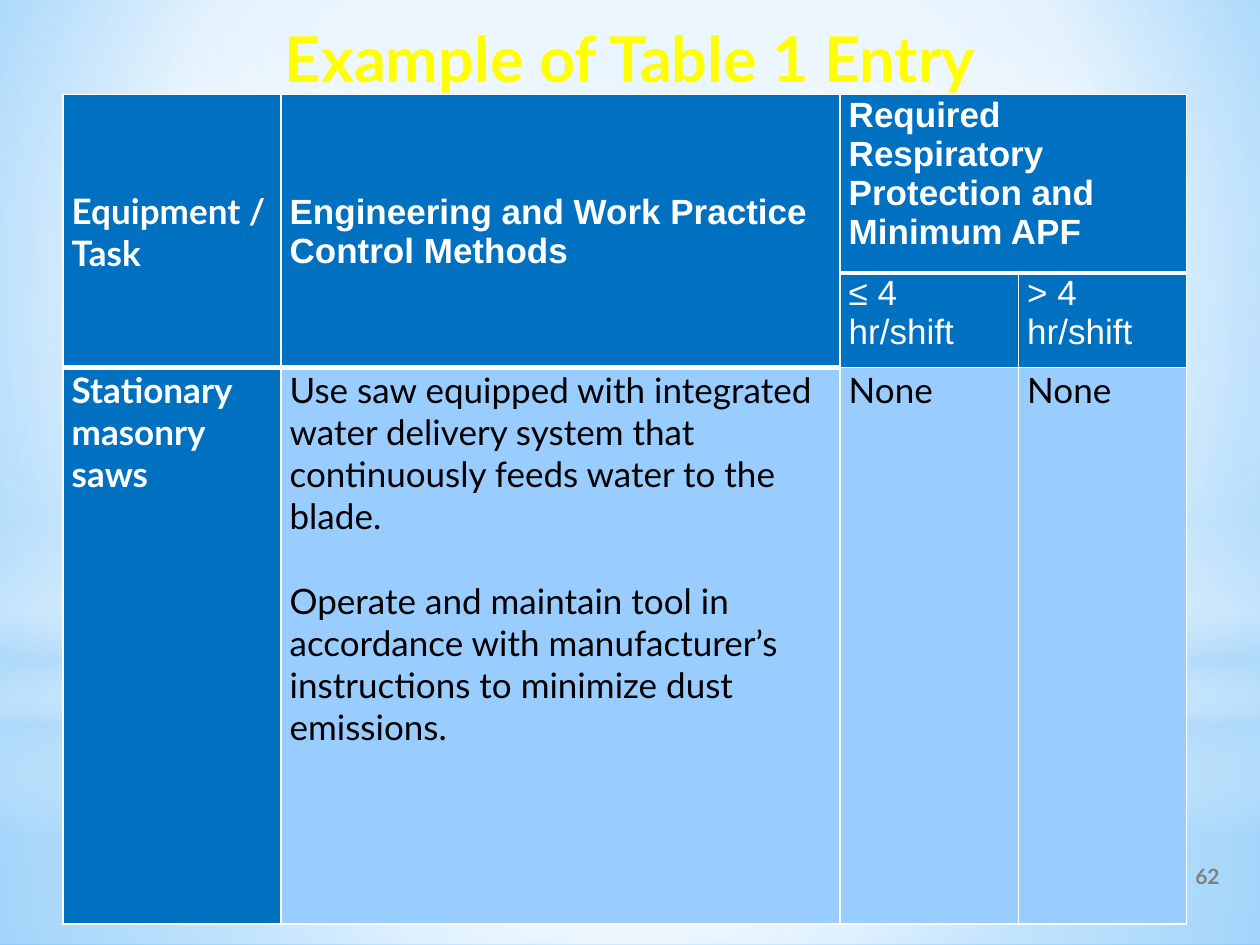
from pptx import Presentation
from pptx.dml.color import RGBColor
from pptx.enum.shapes import MSO_SHAPE
from pptx.enum.text import MSO_ANCHOR, PP_ALIGN
from pptx.oxml import parse_xml
from pptx.oxml.ns import nsdecls, qn
from pptx.util import Pt


class Theme:
    white, black, grey = "FFFFFF", "000000", "808080"
    yellow, edge = "FFFF00", "4E67C8"
    deep, light, mist = "0070C0", "99CCFF", "B4DCFA"
    sky, blue = "9ED5FF", "5BB9FF"
    main, alt = "Lato", "Arial"
    big, mid, small = 36, 20, 12


def style(name, size, color, bold):
    return {"name": name, "size": Pt(size), "bold": bold, "color": color}


def line(tag, width, color):
    return parse_xml(
        f'<a:{tag} {nsdecls("a")} w="{Pt(width)}"><a:solidFill>'
        f'<a:srgbClr val="{color}"/></a:solidFill></a:{tag}>')


def blend(root, stops, to=None):
    """Swap a solid fill for a gradient: circular around to, else downward."""
    marks = "".join(
        f'<a:gs pos="{pos * 1000}"><a:srgbClr val="{color}">'
        f'<a:alpha val="{alpha * 1000}"/></a:srgbClr></a:gs>'
        for pos, color, alpha in stops)
    if to:
        sides = " ".join(f'{s}="{v * 1000}"' for s, v in zip("ltrb", to))
        way = f'<a:path path="circle"><a:fillToRect {sides}/></a:path>'
    else:
        way = '<a:lin ang="5400000" scaled="0"/>'
    old = root.find(".//" + qn("a:solidFill"))
    old.getparent().replace(old, parse_xml(
        f'<a:gradFill {nsdecls("a")} rotWithShape="1">'
        f'<a:gsLst>{marks}</a:gsLst>{way}</a:gradFill>'))


class Deck:
    def __init__(self, theme):
        self.theme = theme
        self.prs = Presentation()
        self.prs.slide_width, self.prs.slide_height = Pt(720), Pt(540)
        self.slide = self.prs.slides.add_slide(self.prs.slide_layouts[5])

    def back(self, stops, to):
        self.slide.background.fill.solid()
        blend(self.slide._element.cSld, stops, to)

    def glow(self, kind, box, stops, to=None):
        shape = self.slide.shapes.add_shape(kind, *map(Pt, box))
        shape.shadow.inherit = False
        shape.line.fill.background()
        shape.fill.solid()
        blend(shape._element.spPr, stops, to)

    def text(self, frame, lines, look, align=PP_ALIGN.LEFT, gap=0):
        for i, words in enumerate(lines):
            para = frame.add_paragraph() if i else frame.paragraphs[0]
            para.alignment = align
            if i and gap:
                para.space_before = Pt(gap)
            run = para.add_run()
            run.text = words
            for key, value in look.items():
                if key == "color":
                    run.font.color.rgb = RGBColor.from_string(value)
                else:
                    setattr(run.font, key, value)

    def title(self, words, box, look):
        shape = self.slide.shapes.title
        # Bring the title in front of the backdrop
        self.slide.shapes._spTree.append(shape._element)
        spots = zip(("left", "top", "width", "height"), box)
        for key, value in spots:
            setattr(shape, key, Pt(value))
        frame = shape.text_frame
        frame.vertical_anchor = MSO_ANCHOR.MIDDLE
        self.text(frame, [words], look, PP_ALIGN.CENTER)
        run = frame.paragraphs[0].runs[0]
        run._r.get_or_add_rPr().insert(0, line("ln", 0.75, self.theme.edge))

    def label(self, words, box, look):
        frame = self.slide.shapes.add_textbox(*map(Pt, box)).text_frame
        frame.word_wrap = True
        frame.vertical_anchor = MSO_ANCHOR.MIDDLE
        self.text(frame, [words], look, PP_ALIGN.CENTER)

    def table(self, spot, cols, rows):
        box = (*spot, sum(cols), sum(rows))
        table = self.slide.shapes.add_table(
            len(rows), len(cols), *map(Pt, box)).table
        table.horz_banding = False
        for col, width in zip(table.columns, cols):
            col.width = Pt(width)
        for row, height in zip(table.rows, rows):
            row.height = Pt(height)
        return table

    def cell(self, cell, fill, base=1):
        form = {"margin_left": 5, "margin_right": 5,
                "margin_top": 0.7, "margin_bottom": 0}
        for key, value in form.items():
            setattr(cell, key, Pt(value))
        cell.fill.solid()
        cell.fill.fore_color.rgb = RGBColor.from_string(fill)
        props = cell._tc.get_or_add_tcPr()
        for i, side in enumerate("LRTB"):
            width = base if side == "B" else 1
            props.insert(i, line("ln" + side, width, self.theme.white))


def main():
    t = Theme
    deck = Deck(t)
    rect, oval = MSO_SHAPE.RECTANGLE, MSO_SHAPE.OVAL
    core = (50, 50, 50, 50)

    # Backdrop
    deck.back([(0, t.sky, 100), (60, t.white, 100), (100, t.blue, 100)],
              (20, 10, 20, 60))
    deck.glow(rect, (0, 402, 720, 138),
              [(0, t.white, 91), (37, t.white, 76), (100, t.mist, 79)], core)
    deck.glow(rect, (0, 0, 720, 402),
              [(0, t.white, 89), (48, t.white, 62), (100, t.mist, 79)], core)
    deck.glow(rect, (0, 297, 720, 180),
              [(0, t.white, 0), (29, t.white, 30), (45, t.mist, 40),
               (55, t.white, 26), (65, t.mist, 60), (100, t.white, 0)])
    deck.glow(oval, (0, 126, 720, 402),
              [(0, t.white, 100), (56, t.white, 0)], core)

    # Title
    deck.title("Example of Table 1 Entry", (36, 6, 648, 54),
               style(t.main, t.big, t.yellow, True))

    # Table grid: two header rows, then the entry
    table = deck.table((36, 54), (124.5, 319.5, 102, 96), (102, 54, 318))
    for r in range(3):
        for c in range(4):
            head = r < 2 or c == 0
            thick = r == 0 or (r == 1 and c < 2)
            deck.cell(table.cell(r, c), t.deep if head else t.light,
                      3 if thick else 1)
    for start, end in (((0, 0), (1, 0)), ((0, 1), (1, 1)), ((0, 2), (0, 3))):
        table.cell(*start).merge(table.cell(*end))
    for c in (0, 1):
        table.cell(0, c).vertical_anchor = MSO_ANCHOR.MIDDLE

    # Table text
    name = style(t.main, t.mid, t.white, True)
    head = style(t.alt, t.mid, t.white, True)
    sub = style(t.alt, t.mid, t.white, False)
    body = style(t.main, t.mid, t.black, False)
    texts = [
        (0, 0, name, ["Equipment / Task"]),
        (0, 1, head, ["Engineering and Work Practice Control Methods"]),
        (0, 2, head, ["Required Respiratory Protection and", "Minimum APF"]),
        (1, 2, sub, ["≤ 4 hr/shift"]),
        (1, 3, sub, ["> 4 hr/shift"]),
        (2, 0, name, ["Stationary masonry saws"]),
        (2, 1, body, [
            "Use saw equipped with integrated water delivery system that "
            "continuously feeds water to the blade.",
            "Operate and maintain tool in accordance with manufacturer’s "
            "instructions to minimize dust emissions."]),
        (2, 2, body, ["None"]),
        (2, 3, body, ["None"]),
    ]
    for r, c, look, lines in texts:
        deck.text(table.cell(r, c).text_frame, lines, look,
                  gap=24 if look is body else 0)

    # Page number
    deck.label("62", (618, 486, 144, 28.8),
               style(t.main, t.small, t.grey, True))
    deck.prs.save("out.pptx")


if __name__ == "__main__":
    main()
